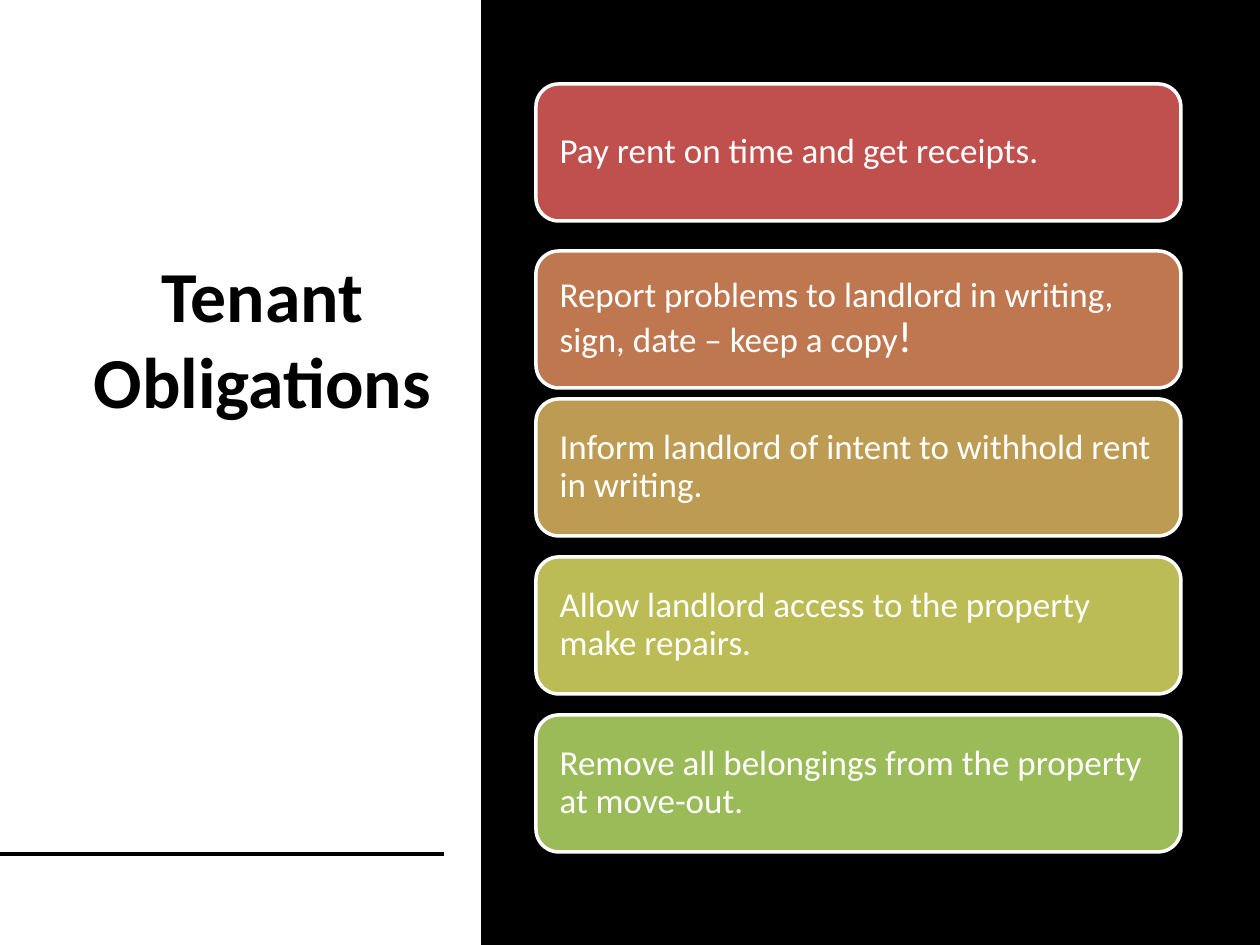
from pptx import Presentation
from pptx.dml.color import RGBColor
from pptx.enum.shapes import MSO_CONNECTOR, MSO_SHAPE
from pptx.enum.text import MSO_ANCHOR, MSO_AUTO_SIZE, PP_ALIGN
from pptx.oxml.ns import qn
from pptx.util import Emu, Pt
from lxml import etree

RECT, ROUNDED = MSO_SHAPE.RECTANGLE, MSO_SHAPE.ROUNDED_RECTANGLE
STRAIGHT = MSO_CONNECTOR.STRAIGHT
MIDDLE = MSO_ANCHOR.MIDDLE
LEFT, CENTER = PP_ALIGN.LEFT, PP_ALIGN.CENTER
NO_AUTOFIT = MSO_AUTO_SIZE.NONE

BLACK = RGBColor(0x00, 0x00, 0x00)
WHITE = RGBColor(0xFF, 0xFF, 0xFF)
RED = RGBColor(0xC0, 0x50, 0x4D)
ORANGE = RGBColor(0xBF, 0x77, 0x50)
OCHRE = RGBColor(0xBD, 0x9B, 0x53)
OLIVE = RGBColor(0xBC, 0xBC, 0x56)
GREEN = RGBColor(0x9B, 0xBB, 0x59)

FONT = "Calibri"
PX_PER_INCH = 126
CARD_LEFT, CARD_WIDTH, CARD_HEIGHT = 536, 645, 137
CARD_PADDING = 17

# top in px, fill, runs of (text, size in points)
OBLIGATIONS = [
    (84, RED, [("Pay rent on time and get receipts.", 20)]),
    (251, ORANGE, [("Report problems to landlord in writing, sign, date – keep a copy", 20),
                   ("!", 25)]),
    (399, OCHRE, [("Inform landlord of intent to withhold rent in writing.", 20)]),
    (557, OLIVE, [("Allow landlord access to the property make repairs.", 20)]),
    (715, GREEN, [("Remove all belongings from the property at move-out.", 20)]),
]


def px(n):
    return Emu(round(n * 914400 / PX_PER_INCH))


def add_run(p, text, size, color, bold=False):
    r = p.add_run()
    r.text = text
    r.font.name = FONT
    r.font.size = Pt(size)
    r.font.bold = bold
    r.font.color.rgb = color


def add_panel(slide):
    """Add the white left panel behind everything else."""
    sp = slide.shapes.add_shape(RECT, 0, 0, px(481), px(945))
    sp.shadow.inherit = False
    sp.fill.solid()
    sp.fill.fore_color.rgb = WHITE
    sp.line.fill.background()
    slide.shapes.element.insert(2, sp.element)


def set_title(slide, text):
    title = slide.shapes.title
    title.left, title.top, title.width, title.height = px(78), px(77), px(369), px(683)
    tf = title.text_frame
    tf.auto_size = NO_AUTOFIT
    tf.word_wrap = True
    tf.vertical_anchor = MIDDLE
    tf.margin_bottom = px(170)  # lifts the title above the panel's middle
    p = tf.paragraphs[0]
    p.alignment = CENTER
    add_run(p, text, 41, BLACK, bold=True)


def add_rule(slide):
    rule = slide.shapes.add_connector(STRAIGHT, 0, px(854), px(444), px(854))
    rule.line.color.rgb = BLACK
    rule.line.width = Pt(2)
    etree.SubElement(rule.element.spPr, qn("a:effectLst"))


def add_card(slide, top, fill, runs):
    sp = slide.shapes.add_shape(
        ROUNDED, px(CARD_LEFT), px(top), px(CARD_WIDTH), px(CARD_HEIGHT))
    sp.shadow.inherit = False
    sp.fill.solid()
    sp.fill.fore_color.rgb = fill
    sp.line.color.rgb = WHITE
    sp.line.width = Pt(2)
    tf = sp.text_frame
    tf.word_wrap = True
    tf.vertical_anchor = MIDDLE
    tf.margin_left = tf.margin_right = px(CARD_PADDING)
    tf.margin_top = tf.margin_bottom = px(CARD_PADDING)
    p = tf.paragraphs[0]
    p.alignment = LEFT
    p.line_spacing = 0.9
    for text, size in runs:
        add_run(p, text, size, WHITE)


def main():
    prs = Presentation()
    prs.slide_width, prs.slide_height = px(1260), px(945)
    slide = prs.slides.add_slide(prs.slide_layouts[5])
    slide.background.fill.solid()
    slide.background.fill.fore_color.rgb = BLACK
    add_panel(slide)
    set_title(slide, "Tenant Obligations")
    add_rule(slide)
    for top, fill, runs in OBLIGATIONS:
        add_card(slide, top, fill, runs)
    prs.save("out.pptx")


if __name__ == "__main__":
    main()
